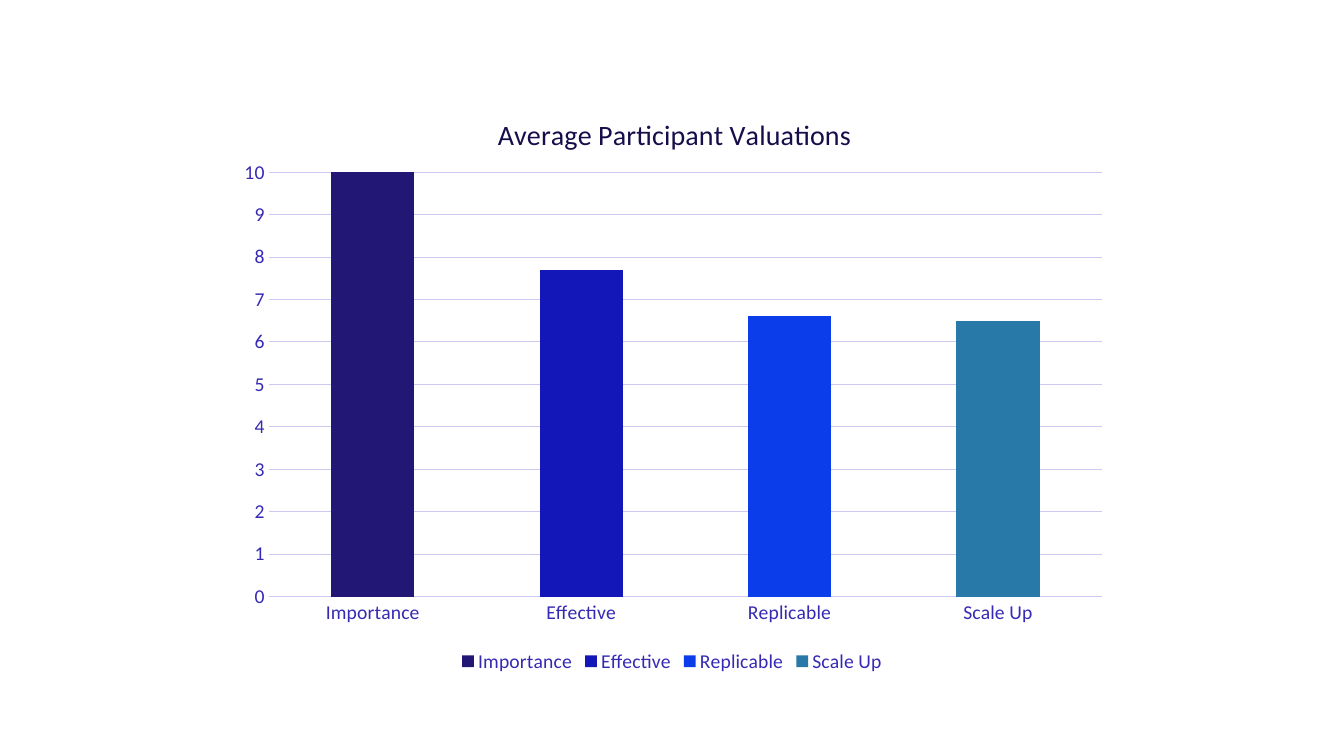
from pptx import Presentation
from pptx.chart.data import CategoryChartData
from pptx.dml.color import RGBColor
from pptx.enum.chart import XL_CHART_TYPE, XL_LEGEND_POSITION, XL_TICK_MARK
from pptx.oxml import parse_xml
from pptx.oxml.ns import nsdecls, qn
from pptx.util import Inches, Pt

COLORS = {
    "text": "100C35",
    "title": "150E4A",
    "label": "3629B4",
    "grid": "CDC9F3",
}
VALUATIONS = [
    ("Importance", 10, "221775"),
    ("Effective", 7.7, "1417B8"),
    ("Replicable", 6.6, "0C3DEA"),
    ("Scale Up", 6.5, "2878A8"),
]


def set_font(font, size, color):
    font.name = "Calibri"
    font.size = Pt(size)
    font.bold = False
    font.color.rgb = RGBColor.from_string(COLORS[color])


def set_line(line):
    line.color.rgb = RGBColor.from_string(COLORS["grid"])
    line.width = Pt(0.75)


def set_layout(element, index, target="", **fractions):
    """Place a chart part by fractions of the chart's size."""
    for old in element.findall(qn("c:layout")):
        element.remove(old)
    modes = '<c:xMode val="edge"/><c:yMode val="edge"/>'
    sizes = "".join(f'<c:{k} val="{v}"/>' for k, v in fractions.items())
    element.insert(index, parse_xml(
        f'<c:layout {nsdecls("c")}><c:manualLayout>{target}{modes}{sizes}'
        '</c:manualLayout></c:layout>'))


def add_valuation_chart(s):
    data = CategoryChartData()
    data.categories = [name for name, _, _ in VALUATIONS]
    data.add_series("Series 1", [value for _, value, _ in VALUATIONS])
    chart = s.shapes.add_chart(
        XL_CHART_TYPE.COLUMN_STACKED, Inches(2.22), Inches(0.79),
        Inches(8.89), Inches(5.93), data).chart
    set_font(chart.font, 10, "text")

    plot = chart.plots[0]
    plot.vary_by_categories = True
    plot.gap_width = 150
    plot.overlap = 100
    for i, (_, _, color) in enumerate(VALUATIONS):
        fill = plot.series[0].points[i].format.fill
        fill.solid()
        fill.fore_color.rgb = RGBColor.from_string(color)
    return chart


def style_title(chart, text):
    chart.has_title = True
    title = chart.chart_title
    title.include_in_layout = False
    p = title.text_frame.paragraphs[0]
    p.text = text
    set_font(p.runs[0].font, 20, "title")
    set_layout(title._element, 1, x=0.3, y=0.05)


def style_axes(chart):
    for axis in (chart.category_axis, chart.value_axis):
        axis.major_tick_mark = XL_TICK_MARK.NONE
        axis.minor_tick_mark = XL_TICK_MARK.NONE
        set_font(axis.tick_labels.font, 14, "label")
    set_line(chart.category_axis.format.line)

    values = chart.value_axis
    values.minimum_scale = 0
    values.maximum_scale = 10
    values.major_unit = 1
    values.format.line.fill.background()
    values.has_major_gridlines = True
    set_line(values.major_gridlines.format.line)

    plot_area = chart._chartSpace.chart.plotArea
    set_layout(plot_area, 0, '<c:layoutTarget val="inner"/>',
               x=0.05, y=0.155, w=0.93, h=0.71)


def style_legend(chart):
    chart.has_legend = True
    chart.legend.position = XL_LEGEND_POSITION.BOTTOM
    chart.legend.include_in_layout = False
    set_font(chart.legend.font, 14, "label")


def main():
    prs = Presentation()
    prs.slide_width = Inches(13.33)
    prs.slide_height = Inches(7.5)
    s = prs.slides.add_slide(prs.slide_layouts[6])
    chart = add_valuation_chart(s)
    style_title(chart, "Average Participant Valuations")
    style_axes(chart)
    style_legend(chart)
    prs.save("out.pptx")


if __name__ == "__main__":
    main()
